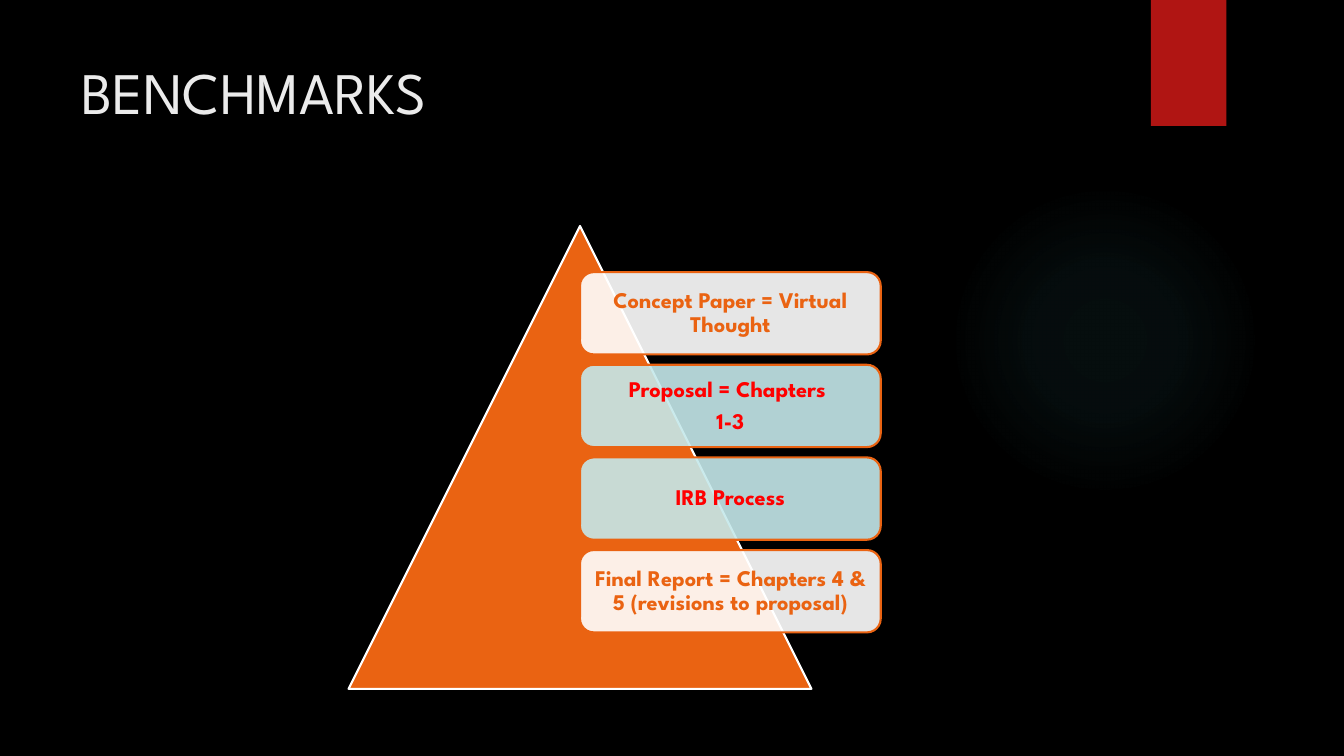
from dataclasses import dataclass
from lxml.etree import SubElement as Sub
from pptx import Presentation
from pptx.dml.color import RGBColor as Rgb
from pptx.enum.shapes import MSO_SHAPE as Form
from pptx.enum.text import MSO_ANCHOR as Anchor, MSO_AUTO_SIZE as Fit, PP_ALIGN as Align
from pptx.oxml import parse_xml
from pptx.oxml.ns import nsdecls, qn
from pptx.util import Inches, Pt


@dataclass(frozen=True)
class Theme:
    face: str = "League Spartan"
    back: str = "000000"
    pale: str = "EBEBEB"
    flag: str = "B01513"
    glow: str = "50B9C1"
    fire: str = "EA6312"
    snow: str = "FFFFFF"
    mist: str = "C5E8EA"
    alert: str = "FF0000"
    head: int = 42
    body: int = 16
    edge: float = 1.5


class Deck:
    cols, rows = 160, 90

    def __init__(self, theme):
        self.theme = theme
        self.prs = Presentation()
        self.prs.slide_width, self.prs.slide_height = Inches(13.33), Inches(7.5)
        self.slide = self.prs.slides.add_slide(self.prs.slide_layouts[5])
        self.pen = self.slide.shapes
        fill = self.slide.background.fill
        fill.solid()
        fill.fore_color.rgb = Rgb.from_string(theme.back)

    def box(self, left, top, width, height):
        col = self.prs.slide_width / self.cols
        row = self.prs.slide_height / self.rows
        return [int(n) for n in (left * col, top * row, width * col, height * row)]

    def put(self, item, **values):
        for name, value in values.items():
            setattr(item, name, value)

    def shape(self, form, area, fill=None, line=None, alpha=None):
        item = self.pen.add_shape(form, *self.box(*area))
        item.shadow.inherit = False
        if fill:
            item.fill.solid()
            item.fill.fore_color.rgb = Rgb.from_string(fill)
        if alpha:
            tint = item.fill._xPr.find(qn("a:solidFill"))[0]
            Sub(tint, qn("a:alpha"), val=str(alpha * 1000))
        if line:
            item.line.color.rgb = Rgb.from_string(line)
            item.line.width = Pt(self.theme.edge)
        else:
            item.line.fill.background()
        return item

    def glow(self, area, stops):
        item = self.shape(Form.OVAL, area)
        item.fill.background()
        marks = "".join(
            f'<a:gs pos="{at * 1000}"><a:srgbClr val="{self.theme.glow}">'
            f'<a:alpha val="{alpha * 1000}"/></a:srgbClr></a:gs>'
            for at, alpha in stops)
        grad = parse_xml(
            f'<a:gradFill {nsdecls("a")}><a:gsLst>{marks}</a:gsLst>'
            '<a:path path="circle"><a:fillToRect l="50000" t="50000" r="50000" b="50000"/>'
            '</a:path></a:gradFill>')
        props = item.fill._xPr
        props.replace(props.find(qn("a:noFill")), grad)

    def font(self, para, size, color, bold):
        self.put(para.font, name=self.theme.face, size=Pt(size), bold=bold)
        para.font.color.rgb = Rgb.from_string(color)

    def title(self, text, area):
        item = self.slide.shapes.title
        left, top, width, height = self.box(*area)
        self.put(item, left=left, top=top, width=width, height=height)
        frame = item.text_frame
        self.put(frame, text=text, auto_size=Fit.NONE, word_wrap=True, vertical_anchor=Anchor.TOP)
        para = frame.paragraphs[0]
        para.alignment = Align.LEFT
        self.font(para, self.theme.head, self.theme.pale, False)

    def card(self, text, area, fill, ink):
        item = self.shape(Form.ROUNDED_RECTANGLE, area, fill, self.theme.fire, 90)
        frame, pad = item.text_frame, Inches(0.07)
        self.put(frame, text=text, word_wrap=True, vertical_anchor=Anchor.MIDDLE,
                 margin_left=pad, margin_right=pad, margin_top=pad, margin_bottom=pad)
        for para in frame.paragraphs:
            self.put(para, alignment=Align.CENTER, line_spacing=0.9,
                     space_after=Pt(0.35 * self.theme.body))
            self.font(para, self.theme.body, ink, True)

    def group(self):
        self.pen = self.slide.shapes.add_group_shape().shapes


def main():
    look = Theme()
    deck = Deck(look)
    deck.glow((113, 22, 37, 37), [(0, 7), (36, 6), (69, 0)])
    deck.shape(Form.RECTANGLE, (137, 0, 9, 15), look.flag)
    deck.title("BENCHMARKS", (8.5, 6, 123.5, 18.4))

    deck.group()
    deck.shape(Form.ISOSCELES_TRIANGLE, (41.5, 26.9, 55.1, 55.1), look.fire, look.snow)
    plain, key = (look.snow, look.fire), (look.mist, look.alert)
    steps = [
        ("Concept Paper = Virtual Thought", plain),
        ("Proposal = Chapters \n1-3", key),
        ("IRB Process", key),
        ("Final Report = Chapters 4 & 5 (revisions to proposal)", plain),
    ]
    tall, gap = 9.8, 1.23
    for row, (text, style) in enumerate(steps):
        deck.card(text, (69.05, 32.4 + row * (tall + gap), 35.8, tall), *style)
    deck.prs.save("out.pptx")


if __name__ == "__main__":
    main()
